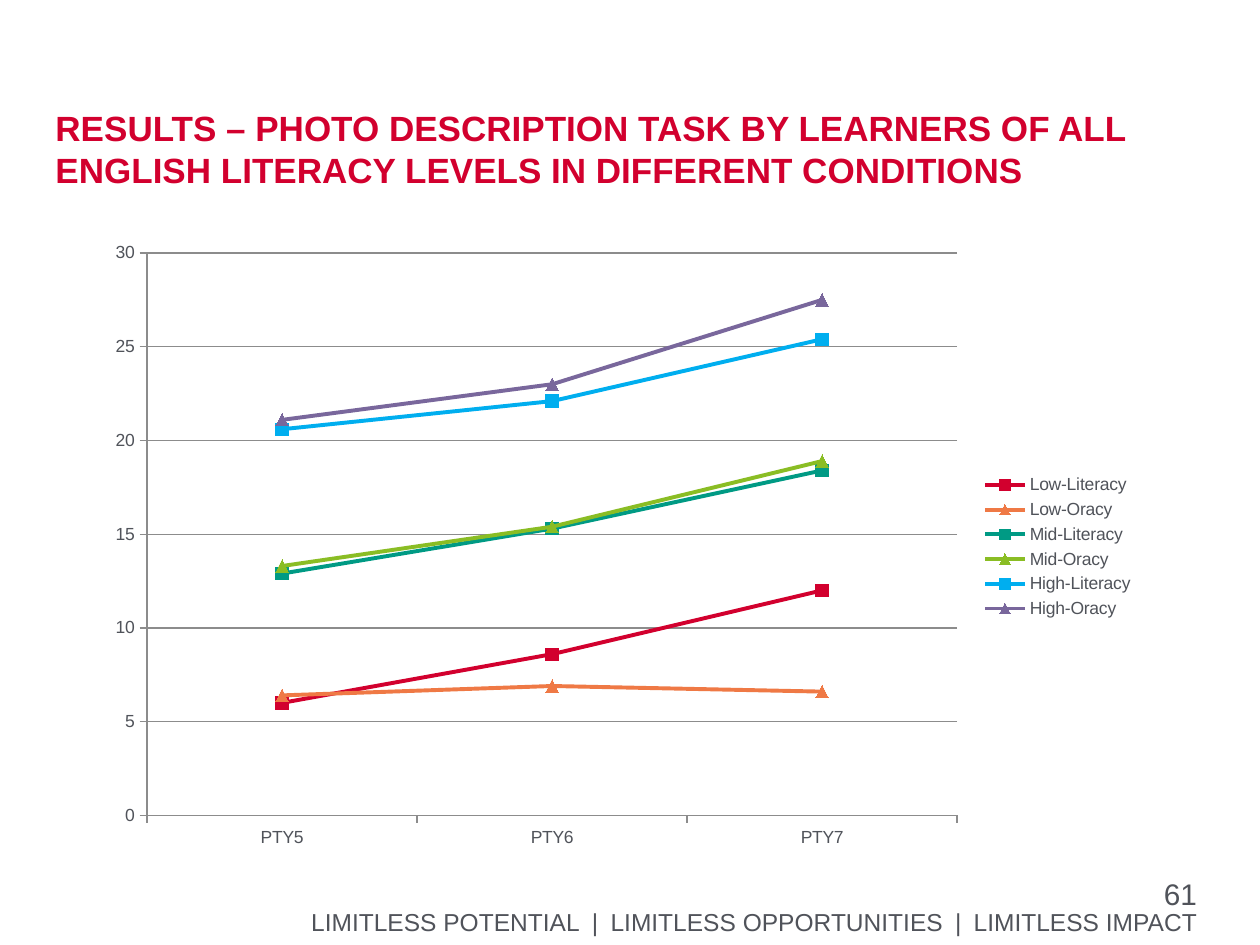
from lxml.etree import SubElement
from pptx import Presentation
from pptx.chart.data import CategoryChartData
from pptx.dml.color import RGBColor
from pptx.enum.chart import XL_CHART_TYPE as ChartType, XL_LEGEND_POSITION as LegendPosition
from pptx.enum.chart import XL_MARKER_STYLE as Marker, XL_TICK_MARK as Tick
from pptx.enum.text import MSO_ANCHOR as Anchor, MSO_AUTO_SIZE as AutoSize, PP_ALIGN as Align
from pptx.oxml.ns import qn
from pptx.util import Inches, Pt

RED, GREY, GRID = "D2002E", "50535A", "8C8C8C"
TITLE = ("RESULTS – PHOTO DESCRIPTION TASK BY LEARNERS OF ALL \v"
         "ENGLISH LITERACY LEVELS IN DIFFERENT CONDITIONS")
TAGLINE = "LIMITLESS POTENTIAL\u2002|\u2002LIMITLESS OPPORTUNITIES\u2002|\u2002LIMITLESS IMPACT"
PAGE_NUMBER = "61"

CATEGORIES = ["PTY5", "PTY6", "PTY7"]
SERIES = [
    ("Low-Literacy", [6, 8.6, 12], RED),
    ("Low-Oracy", [6.4, 6.9, 6.6], "EF7945"),
    ("Mid-Literacy", [12.9, 15.3, 18.4], "009A84"),
    ("Mid-Oracy", [13.3, 15.4, 18.9], "8ABD24"),
    ("High-Literacy", [20.6, 22.1, 25.4], "00AEEF"),
    ("High-Oracy", [21.1, 23, 27.5], "79679C"),
]
MARKERS = {"Literacy": Marker.SQUARE, "Oracy": Marker.TRIANGLE}
PLOT_LAYOUT = {"layoutTarget": "inner", "xMode": "edge", "yMode": "edge",
               "x": 0.05, "y": 0.03, "w": 0.77, "h": 0.9}


def color(value):
    return RGBColor.from_string(value)


def set_values(target, values):
    for name, value in values.items():
        setattr(target, name, value)


def style_font(font, size, value, bold=False):
    set_values(font, {"name": "Arial", "size": Pt(size), "bold": bold})
    font.color.rgb = color(value)


def fill_text(box, text, size, value, align, anchor, bold=False, wrap=True):
    frame = box.text_frame
    set_values(frame, {"margin_left": 0, "margin_right": 0, "margin_top": 0, "margin_bottom": 0,
                       "word_wrap": wrap, "vertical_anchor": anchor, "auto_size": AutoSize.NONE})
    para = frame.paragraphs[0]
    para.text = text
    para.alignment = align
    for span in para.runs:
        style_font(span.font, size, value, bold)


def add_text(slide, area, *style):
    box = slide.shapes.add_textbox(*map(Inches, area))
    fill_text(box, *style)


def style_axis(axis):
    axis.major_tick_mark = Tick.OUTSIDE
    axis.minor_tick_mark = Tick.NONE
    set_line(axis.format.line, GRID, 0.75)


def set_line(line, value, width):
    line.color.rgb = color(value)
    line.width = Pt(width)


def place_plot(chart):
    """Fix the inner plot area as fractions of the chart."""
    area = chart._chartSpace.chart.plotArea
    for old in area.findall(qn("c:layout")):
        area.remove(old)
    layout = SubElement(area, qn("c:layout"))
    area.insert(0, layout)
    manual = SubElement(layout, qn("c:manualLayout"))
    for name, value in PLOT_LAYOUT.items():
        SubElement(manual, qn("c:" + name)).set("val", str(value))


def add_results_chart(slide):
    data = CategoryChartData()
    data.categories = CATEGORIES
    for name, values, _ in SERIES:
        data.add_series(name, values)
    area = map(Inches, (0.75, 1.86, 8.35, 4.96))
    chart = slide.shapes.add_chart(ChartType.LINE_MARKERS, *area, data).chart
    style_font(chart.font, 10, GREY)
    chart.has_title = False
    chart.has_legend = True
    set_values(chart.legend, {"position": LegendPosition.RIGHT, "include_in_layout": False})
    style_axis(chart.category_axis)
    style_axis(chart.value_axis)
    set_values(chart.value_axis, {"minimum_scale": 0, "maximum_scale": 30, "major_unit": 5,
                                  "has_major_gridlines": True})
    set_line(chart.value_axis.major_gridlines.format.line, GRID, 0.75)
    plot = chart.plots[0]
    plot.vary_by_categories = False
    for series, (name, _, value) in zip(plot.series, SERIES):
        series.smooth = False
        set_line(series.format.line, value, 2.25)
        set_values(series.marker, {"style": MARKERS[name.split("-")[1]], "size": 7})
        series.marker.format.fill.solid()
        series.marker.format.fill.fore_color.rgb = color(value)
        set_line(series.marker.format.line, value, 0.75)
    place_plot(chart)


def main():
    deck = Presentation()
    set_values(deck, {"slide_width": Inches(10), "slide_height": Inches(7.5)})
    slide = deck.slides.add_slide(deck.slide_layouts[5])
    add_text(slide, (2.11, 7.19, 7.4, 0.24), TAGLINE, 14, GREY, Align.RIGHT, Anchor.BOTTOM)
    title = slide.shapes.title
    set_values(title, {"left": Inches(0.44), "top": Inches(0.6),
                       "width": Inches(9.06), "height": Inches(0.91)})
    fill_text(title, TITLE, 20, RED, Align.LEFT, Anchor.BOTTOM, bold=True, wrap=False)
    add_text(slide, (7.17, 6.95, 2.33, 0.4), PAGE_NUMBER, 17, GREY, Align.RIGHT, Anchor.TOP)
    add_results_chart(slide)
    deck.save("out.pptx")


if __name__ == "__main__":
    main()
